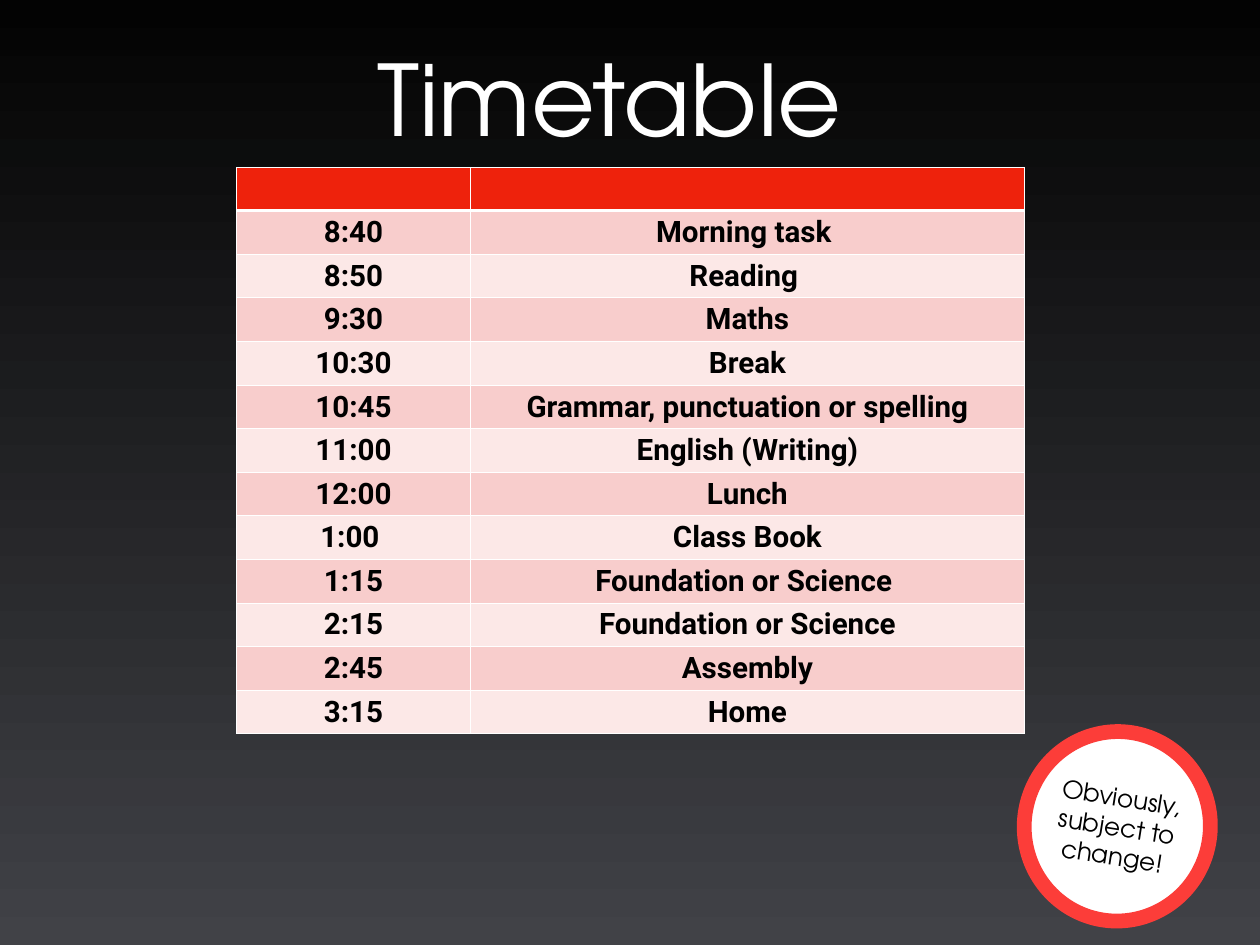
"""Build the class timetable slide."""
from dataclasses import dataclass

from lxml.etree import SubElement
from pptx import Presentation
from pptx.dml.color import RGBColor as RGB
from pptx.enum.shapes import MSO_SHAPE as SHAPE
from pptx.enum.text import MSO_ANCHOR as ANCHOR, MSO_AUTO_SIZE as AUTOSIZE, PP_ALIGN as ALIGN
from pptx.oxml.ns import qn
from pptx.util import Inches, Pt


@dataclass(frozen=True)
class Theme:
    white: str = "FFFFFF"
    black: str = "000000"
    bg_top: str = "030303"
    bg_bottom: str = "414247"
    header: str = "EE220C"
    bands: tuple = ("F8CDCC", "FCE8E7")
    ring: str = "FC3D39"
    display_font: str = "TeX Gyre Adventor"
    table_font: str = "Roboto"
    title_size: int = 80
    table_size: int = 24
    badge_size: int = 20
    ring_width: int = 12
    rule: int = 1
    header_rule: int = 3


@dataclass(frozen=True)
class Box:
    left: float
    top: float
    width: float
    height: float

    def emu(self) -> tuple:
        return tuple(Inches(v) for v in (self.left, self.top, self.width, self.height))


@dataclass(frozen=True)
class Lesson:
    time: str
    subject: str


THEME = Theme()
TITLE_BOX = Box(1.16, 0.24, 11.44, 1.58)
BADGE_BOX = Box(11.56, 8.26, 2.1, 2.14)
TABLE_BOX = Box(2.67, 1.89, 8.89, 6.37)
COLUMNS = (2.64, 6.25)
ROW_HEIGHT = 0.49
LESSONS = (
    Lesson("8:40", "Morning task "),
    Lesson("8:50", "Reading "),
    Lesson("9:30", "Maths"),
    Lesson("10:30", "Break"),
    Lesson("10:45", "Grammar, punctuation or spelling"),
    Lesson("11:00", "English (Writing)"),
    Lesson("12:00", "Lunch"),
    Lesson("1:00 ", "Class Book"),
    Lesson("1:15", "Foundation or Science "),
    Lesson("2:15", "Foundation or Science"),
    Lesson("2:45", "Assembly"),
    Lesson("3:15", "Home"),
)


def set_attrs(target, values: dict) -> None:
    for name, value in values.items():
        setattr(target, name, value)


def write(tf, text: str, font: str, size: int, color: str, bold: bool = False) -> None:
    p = tf.paragraphs[0]
    p.alignment = ALIGN.CENTER
    r = p.add_run()
    r.text = text
    set_attrs(r.font, {"name": font, "size": Pt(size), "bold": bold})
    r.font.color.rgb = RGB.from_string(color)


def format_frame(tf, anchor) -> None:
    margins = {f"margin_{side}": Inches(0.06) for side in ("left", "top", "right", "bottom")}
    set_attrs(tf, {"word_wrap": True, "auto_size": AUTOSIZE.NONE, "vertical_anchor": anchor, **margins})


def paint_background(s) -> None:
    fill = s.background.fill
    fill.gradient()
    fill.gradient_angle = 270
    for stop, color in zip(fill.gradient_stops, (THEME.bg_top, THEME.bg_bottom)):
        stop.color.rgb = RGB.from_string(color)


def format_cell(cell, color: str, top: int, bottom: int) -> None:
    tc_pr = cell._tc.get_or_add_tcPr()
    widths = {"lnL": THEME.rule, "lnR": THEME.rule, "lnT": top, "lnB": bottom}
    for tag, width in widths.items():
        ln = SubElement(tc_pr, qn(f"a:{tag}"), w=str(Pt(width)))
        SubElement(SubElement(ln, qn("a:solidFill")), qn("a:srgbClr"), val=THEME.white)
    cell.fill.solid()
    cell.fill.fore_color.rgb = RGB.from_string(color)
    cell.vertical_anchor = ANCHOR.MIDDLE


def add_title(s, text: str) -> None:
    sp = s.shapes.title
    set_attrs(sp, dict(zip(("left", "top", "width", "height"), TITLE_BOX.emu())))
    format_frame(sp.text_frame, ANCHOR.BOTTOM)
    write(sp.text_frame, text, THEME.display_font, THEME.title_size, THEME.white)


def add_timetable(s) -> None:
    table = s.shapes.add_table(len(LESSONS) + 1, len(COLUMNS), *TABLE_BOX.emu()).table
    for column, width in zip(table.columns, COLUMNS):
        column.width = Inches(width)
    for row in table.rows:
        row.height = Inches(ROW_HEIGHT)
    for cell in table.rows[0].cells:
        format_cell(cell, THEME.header, THEME.rule, THEME.header_rule)
    for i, lesson in enumerate(LESSONS):
        top = THEME.rule if i else THEME.header_rule
        for cell, text in zip(table.rows[i + 1].cells, (lesson.time, lesson.subject)):
            format_cell(cell, THEME.bands[i % 2], top, THEME.rule)
            write(cell.text_frame, text, THEME.table_font, THEME.table_size, THEME.black, True)


def add_badge(s, text: str) -> None:
    sp = s.shapes.add_shape(SHAPE.OVAL, *BADGE_BOX.emu())
    sp.rotation = 9
    sp.shadow.inherit = False
    sp.fill.solid()
    sp.fill.fore_color.rgb = RGB.from_string(THEME.white)
    sp.line.color.rgb = RGB.from_string(THEME.ring)
    sp.line.width = Pt(THEME.ring_width)
    format_frame(sp.text_frame, ANCHOR.MIDDLE)
    write(sp.text_frame, text, THEME.display_font, THEME.badge_size, THEME.black)


def main() -> None:
    prs = Presentation()
    set_attrs(prs, {"slide_width": Inches(14.22), "slide_height": Inches(10.67)})
    s = prs.slides.add_slide(prs.slide_layouts.get_by_name("Title Only"))
    paint_background(s)
    add_title(s, "Timetable")
    add_badge(s, "Obviously, subject to change!")
    add_timetable(s)
    prs.save("out.pptx")


if __name__ == "__main__":
    main()
